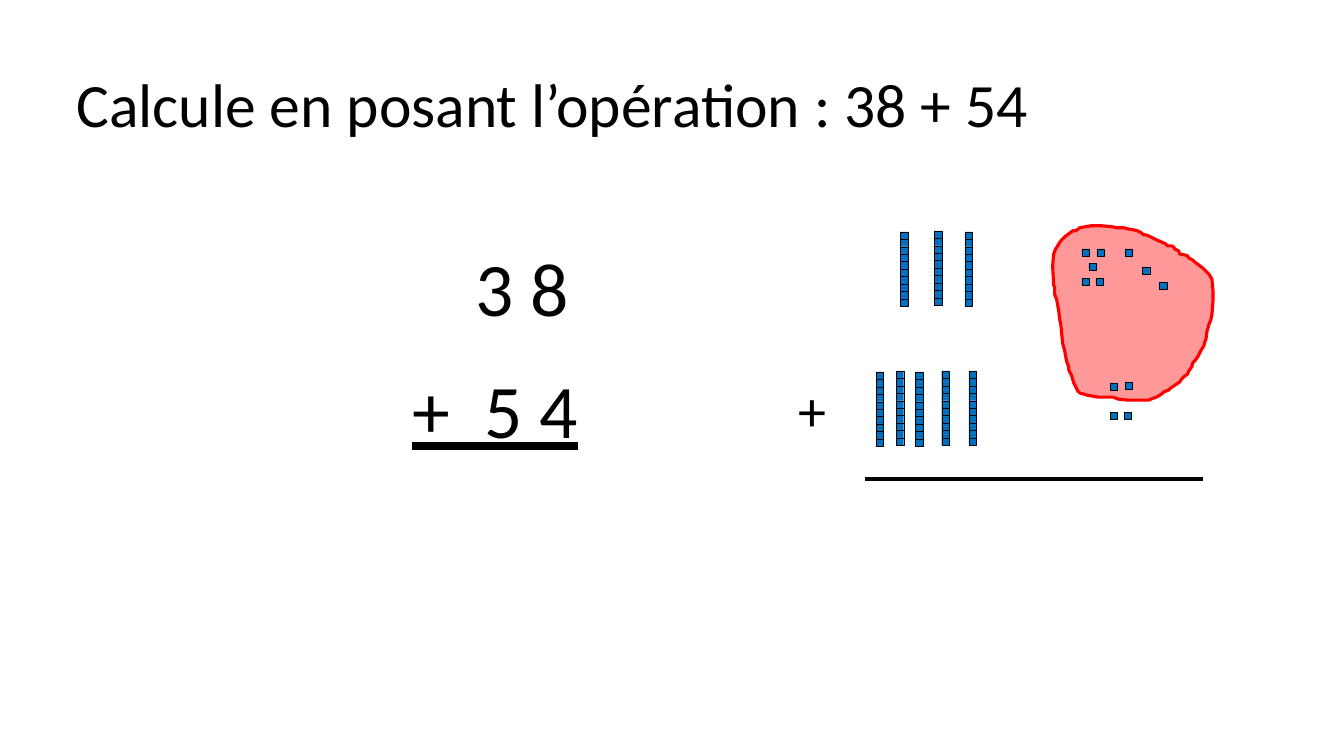
from lxml.etree import SubElement
from pptx import Presentation
from pptx.dml.color import RGBColor
from pptx.enum.shapes import MSO_CONNECTOR as Connector, MSO_SHAPE as Shape
from pptx.enum.text import MSO_ANCHOR as Anchor, PP_ALIGN as Align
from pptx.oxml.ns import qn
from pptx.util import Inches, Pt

BLACK = RGBColor(0x00, 0x00, 0x00)
CUBE_BLUE = RGBColor(0x00, 0x70, 0xC0)
GROUP_RED = RGBColor(0xFF, 0x00, 0x00)
GROUP_PINK = RGBColor(0xFF, 0x99, 0x99)

UNIT = Inches(0.1)
CUBE = 0.74
CUBES_PER_ROD = 10

RODS_TOP = [(3.5, 0.6), (6.9, 0.5), (9.9, 0.6)]
RODS_BOTTOM = [(1.1, 14.5), (3.1, 14.4), (5, 14.5), (7.6, 14.4), (10.3, 14.4)]
UNITS_TOP = [(21.5, 2.3), (23, 2.3), (21.5, 5.2), (22.9, 5.2),
             (22.2, 3.7), (25.8, 2.3), (27.5, 4.1), (29.2, 5.6)]
UNITS_BOTTOM = [(24.3, 15.6), (25.8, 15.5), (24.3, 18.5), (25.7, 18.5)]

OUTLINE = [
    (118, 20), (114, 20), (112, 18), (110, 17), (103, 14), (97, 11), (95, 10), (92, 9),
    (90, 9), (88, 7), (84, 5), (80, 4), (74, 3), (71, 2), (64, 2), (59, 1), (49, 0),
    (38, 0.5), (27, 2), (23, 5), (20, 5), (16, 8), (12, 11), (10, 13), (9, 14), (6, 18),
    (5, 20), (3, 23), (1, 28), (0, 40), (1, 59), (2, 61), (2, 68), (4, 73), (5, 79),
    (6, 84), (7, 93), (8, 97), (9, 107), (10, 117), (12, 124), (13, 130), (14, 135),
    (16, 140), (16, 143), (18, 147), (19, 149), (21, 156), (22, 158), (25, 164),
    (27, 166), (31, 167), (34, 168), (45, 170), (60, 170), (65, 172), (75, 173),
    (95, 173), (100, 171), (103, 170), (108, 167), (110, 165), (115, 163), (117, 161),
    (123, 157), (126, 155), (128, 152), (130, 150), (134, 147), (135, 144), (138, 140),
    (139, 136), (141, 134), (144, 130), (147, 124), (150, 119), (151, 115), (152, 113),
    (153, 105), (155, 98), (157, 93), (158, 88), (159, 75), (159, 64), (158, 53),
    (155, 48), (149, 42), (145, 39), (141, 36), (139, 34), (135, 32), (134, 30),
    (131, 29), (126, 28), (125, 25), (121, 23), (120, 21),
]


def units(*lengths):
    return [round(length * UNIT) for length in lengths]


def add_text(slide, text, left, top, width, height, size, align=Align.LEFT,
             anchor=Anchor.TOP, underline=False, spacing=1.0):
    frame = slide.shapes.add_textbox(*units(left, top, width, height)).text_frame
    frame.word_wrap = True
    frame.vertical_anchor = anchor
    paragraph = frame.paragraphs[0]
    paragraph.alignment = align
    paragraph.line_spacing = spacing
    run = paragraph.add_run()
    run.text = text
    run.font.name = "Calibri"
    run.font.size = Pt(size)
    run.font.color.rgb = BLACK
    run.font.underline = underline


def paint(shape, fill, line, weight):
    shape.shadow.inherit = False
    shape.fill.solid()
    shape.fill.fore_color.rgb = fill
    shape.line.color.rgb = line
    shape.line.width = Pt(weight)


def add_cube(shapes, left, top):
    cube = shapes.add_shape(Shape.RECTANGLE, *units(left, top, CUBE, CUBE))
    paint(cube, CUBE_BLUE, BLACK, 0.25)


def add_rod(slide, left, top):
    rod = slide.shapes.add_group_shape()
    for index in range(CUBES_PER_ROD):
        add_cube(rod.shapes, left, top + index * CUBE)


def add_ten_outline(slide, left, top):
    builder = slide.shapes.build_freeform(*OUTLINE[0], scale=UNIT / 10)
    builder.add_line_segments(OUTLINE[1:], close=True)
    paint(builder.convert_to_shape(*units(left, top)), GROUP_PINK, GROUP_RED, 2.25)


def add_sum_line(slide, left, top, width):
    line = slide.shapes.add_connector(
        Connector.STRAIGHT, *units(left, top, left + width, top))
    line.line.color.rgb = BLACK
    line.line.width = Pt(3)
    SubElement(line._element.spPr, qn("a:effectLst"))


def add_title(slide, left, top, width, height):
    add_text(slide, "Calcule en posant l’opération : 38 + 54", left, top, width, height,
             size=44, anchor=Anchor.MIDDLE, spacing=0.9)


def add_written_sum(slide, left, top, width):
    add_text(slide, "3 8 ", left + 4.2, top, 17.1, 10.1, size=54, align=Align.CENTER)
    add_text(slide, "+  5 4", left, top + 12.1, width, 10.1, size=54, underline=True)


def add_cube_sum(slide, left, top, width, height):
    add_ten_outline(slide, left + 18.6, top)
    for x, y in RODS_TOP + RODS_BOTTOM:
        add_rod(slide, left + x, top + y)
    for x, y in UNITS_TOP + UNITS_BOTTOM:
        add_cube(slide.shapes, left + x, top + y)
    add_sum_line(slide, left, top + height, width)
    add_text(slide, "+", left - 7.6, top + 14.4, 6.5, 7.7, size=40)


def main():
    presentation = Presentation()
    presentation.slide_width = Inches(13.33)
    presentation.slide_height = Inches(7.5)
    slide = presentation.slides.add_slide(presentation.slide_layouts[6])
    add_title(slide, left=6.6, top=3.4, width=115, height=14.5)
    add_written_sum(slide, left=39.9, top=23.4, width=22.9)
    add_cube_sum(slide, left=85.8, top=22.4, width=33.5, height=25.1)
    presentation.save("out.pptx")


if __name__ == "__main__":
    main()
